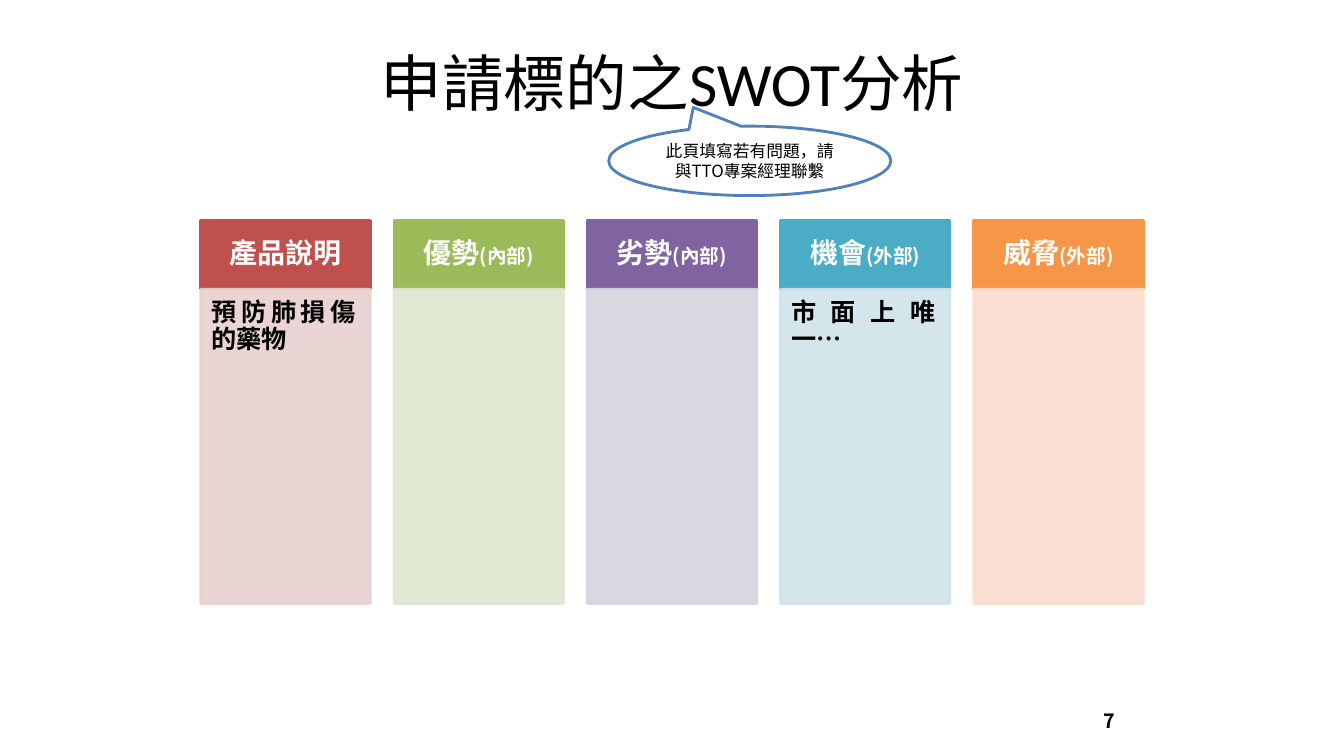
import pptx
import pptx.util
import pptx.dml.color
import pptx.enum.shapes
import pptx.enum.text
import pptx.oxml.ns
from dataclasses import dataclass
from lxml import etree

Cm, Pt = pptx.util.Cm, pptx.util.Pt
RGB = pptx.dml.color.RGBColor.from_string
Shape = pptx.enum.shapes.MSO_SHAPE
Align = pptx.enum.text.PP_ALIGN
Anchor = pptx.enum.text.MSO_ANCHOR
qn = pptx.oxml.ns.qn


@dataclass(frozen=True)
class Theme:
    latin: str = "Calibri"
    serif: str = "Times New Roman"
    asian: str = "Noto Sans CJK SC"
    ink: str = "000000"
    paper: str = "FFFFFF"
    accent: str = "4F81BD"
    title: int = 44
    heading: int = 20
    body: int = 18
    small: int = 14
    note: int = 12
    line: int = 2
    tint_opacity: int = 90


class SwotPage:
    def __init__(self, deck, theme):
        self.theme = theme
        self.page = deck.slides.add_slide(deck.slide_layouts[5])

    def set_text(self, box, spans, font, color, align, bold=False,
                 anchor=Anchor.MIDDLE, insets=(0.25, 0.13, 0.25, 0.13), spacing=1.0):
        """Fill a box with one paragraph of (text, size) spans."""
        frame = box.text_frame
        frame.word_wrap = True
        frame.vertical_anchor = anchor
        (frame.margin_left, frame.margin_top,
         frame.margin_right, frame.margin_bottom) = map(Cm, insets)
        para = frame.paragraphs[0]
        para.alignment, para.line_spacing = align, spacing
        for text, size in spans:
            span = para.add_run()
            span.text = text
            span.font.size, span.font.bold = Pt(size), bold
            span.font.color.rgb = RGB(color)
            span.font.name = font
            asian = etree.SubElement(span.font._element, qn("a:ea"))
            asian.set("typeface", self.theme.asian)

    def title(self, text, *place):
        box = self.page.shapes.title
        box.left, box.top, box.width, box.height = map(Cm, place)
        self.set_text(box, [(text, self.theme.title)], self.theme.latin,
                      self.theme.ink, Align.CENTER)

    def panel(self, kind, place, fill, line, opacity=100):
        box = self.page.shapes.add_shape(kind, *map(Cm, place))
        box.shadow.inherit = False
        box.fill.solid()
        box.fill.fore_color.rgb = RGB(fill)
        box.line.color.rgb = RGB(line)
        box.line.width = Pt(self.theme.line)
        if opacity < 100:
            for color in box._element.spPr.iter(qn("a:srgbClr")):
                etree.SubElement(color, qn("a:alpha")).set("val", str(opacity * 1000))
        return box

    def column(self, left, heading, scope, color, tint, text, font):
        theme = self.theme
        header = self.panel(Shape.RECTANGLE, (left, 5.56, 4.27, 1.72), color, color)
        spans = [(heading, theme.heading)]
        if scope:
            spans.append((scope, theme.small))
        self.set_text(header, spans, theme.asian, theme.paper, Align.CENTER, bold=True,
                      insets=(0.41, 0.23, 0.41, 0.23), spacing=0.9)
        body = self.panel(Shape.RECTANGLE, (left, 7.29, 4.27, 7.92), tint, tint,
                          theme.tint_opacity)
        if text:
            self.set_text(body, [(text, theme.body)], font, theme.ink, Align.JUSTIFY,
                          bold=True, anchor=Anchor.TOP,
                          insets=(0.27, 0.27, 0.36, 0.4), spacing=0.9)

    def callout(self, text, *place):
        theme = self.theme
        box = self.panel(Shape.OVAL_CALLOUT, place, theme.paper, theme.accent)
        box.adjustments[0], box.adjustments[1] = -0.2, -0.77
        self.set_text(box, [(text, theme.note)], theme.asian, theme.ink, Align.CENTER)

    def number(self, text, *place):
        box = self.page.shapes.add_textbox(*map(Cm, place))
        self.set_text(box, [(text, self.theme.small)], self.theme.asian,
                      self.theme.ink, Align.RIGHT, bold=True)


def main():
    deck = pptx.Presentation()
    deck.slide_width, deck.slide_height = Cm(33.87), Cm(19.05)
    theme = Theme()
    swot = SwotPage(deck, theme)
    swot.title("申請標的之SWOT分析", 5.51, 0.48, 22.86, 3.18)

    # Five columns: heading, scope, colour, tint, text, font
    columns = [
        ("產品說明", "", "C0504D", "E8D0D0", "預防肺損傷的藥物", theme.serif),
        ("優勢", "(內部)", "9BBB59", "DEE7D1", "", theme.latin),
        ("劣勢", "(內部)", "8064A2", "D8D3E0", "", theme.latin),
        ("機會", "(外部)", "4BACC6", "D0E3EA", "市面上唯一…", theme.latin),
        ("威脅", "(外部)", "F79646", "FCDDCF", "", theme.latin),
    ]
    for index, column in enumerate(columns):
        swot.column(5.06 + 4.87 * index, *column)

    # Page number and hint
    swot.number("7", 22.43, 17.65, 5.92, 1.02)
    swot.callout("此頁填寫若有問題，請與TTO專案經理聯繫", 15.34, 3.18, 7.11, 1.75)
    deck.save("out.pptx")


if __name__ == "__main__":
    main()
